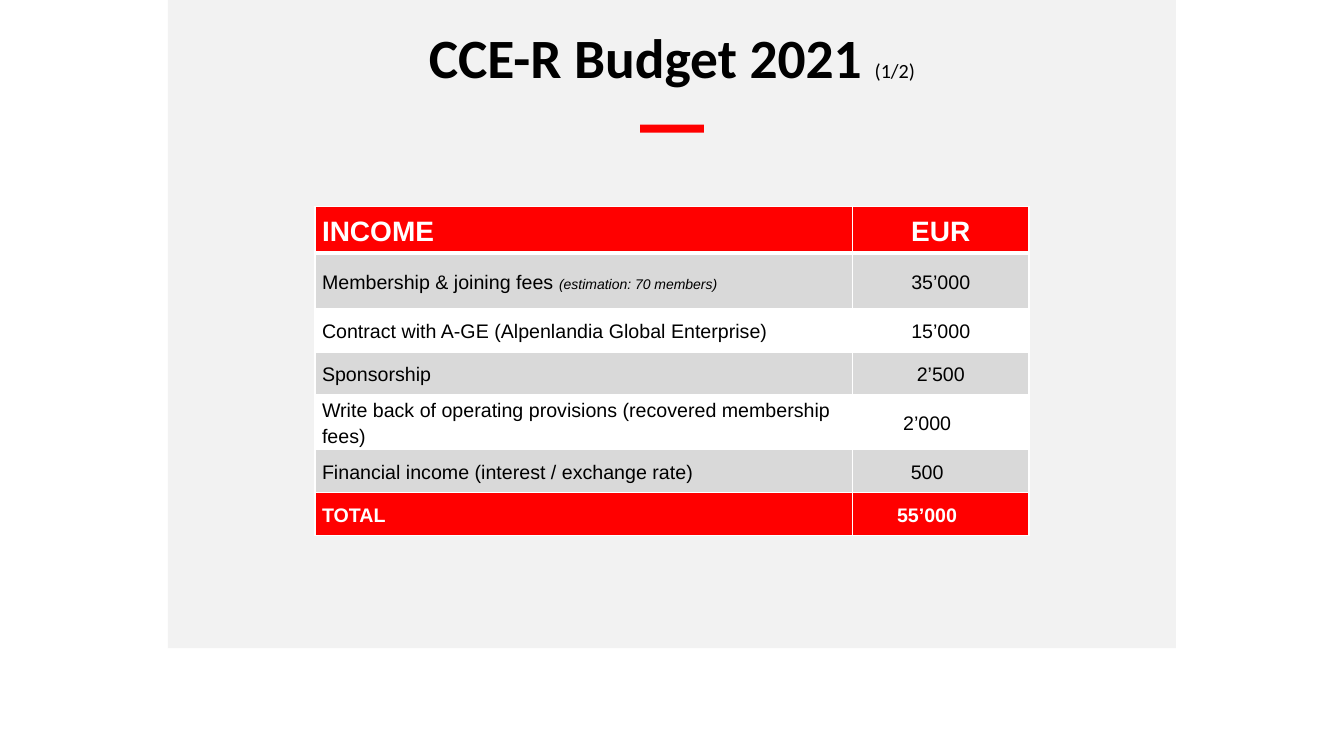
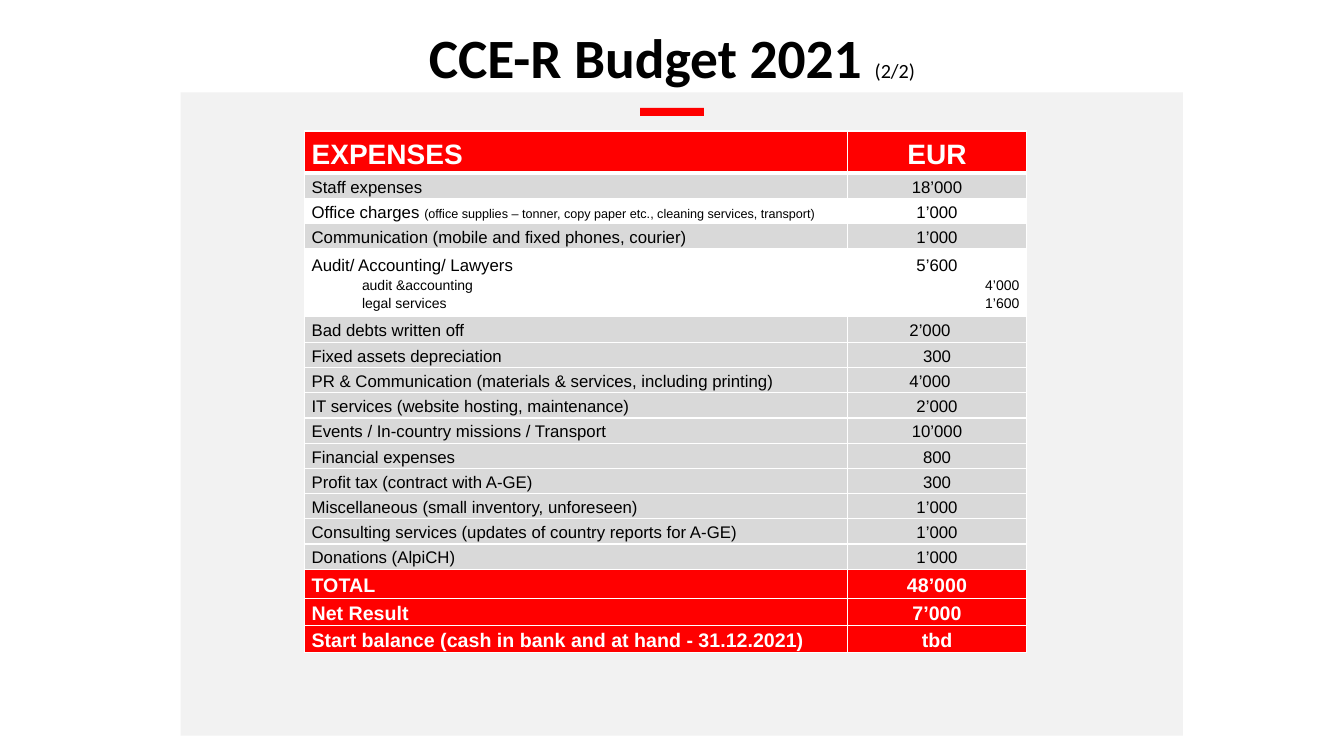
from dataclasses import dataclass

from lxml.etree import SubElement
from pptx import Presentation
from pptx.dml.color import RGBColor
from pptx.enum.shapes import MSO_SHAPE as SHAPE
from pptx.enum.text import MSO_ANCHOR as ANCHOR, PP_ALIGN as ALIGN
from pptx.oxml.ns import qn
from pptx.util import Pt

COLORS = {"red": "FF0000", "panel": "F2F2F2", "grey": "D9D9D9",
          "white": "FFFFFF", "black": "000000"}
SLIDE_W, SLIDE_H = 960, 540
TITLE_BOX = (156, 21.6, 648, 44)
ACCENT_W, ACCENT_H = 45.6, 5.8
CELL_INSET = 5


@dataclass
class Row:
    label: str
    amount: str
    height: float
    fill: str = "grey"
    note: str = ""           # small text after the label
    note_size: float = 10
    note_italic: bool = False
    details: tuple = ()      # indented (label, amount) lines
    shift: float = 0         # extra right inset of the amount
    size: float = 0          # overrides the table's body size


def rgb(name):
    return RGBColor.from_string(COLORS[name])


def add_run(p, text, size, color="black", bold=False, italic=False, font="Arial"):
    r = p.add_run()
    r.text = text
    r.font.name, r.font.size = font, Pt(size)
    r.font.bold, r.font.italic = bold, italic
    r.font.color.rgb = rgb(color)


def add_rect(slide, box, color):
    sp = slide.shapes.add_shape(SHAPE.RECTANGLE, *map(Pt, box))
    sp.shadow.inherit = False
    sp.fill.solid()
    sp.fill.fore_color.rgb = rgb(color)
    sp.line.fill.background()


def add_title(slide, box, page):
    sp = slide.shapes.add_textbox(*map(Pt, box))
    tf = sp.text_frame
    tf.word_wrap = True
    tf.vertical_anchor = ANCHOR.MIDDLE
    p = tf.paragraphs[0]
    p.alignment, p.line_spacing = ALIGN.CENTER, 0.9
    add_run(p, "CCE-R Budget 2021 ", 39.6, bold=True, font="Calibri")
    add_run(p, page, 14.4, font="Calibri")


def add_accent(slide, box, top):
    """Short red bar centred under the title box."""
    left, _, width, _ = box
    add_rect(slide, (left + (width - ACCENT_W) / 2, top, ACCENT_W, ACCENT_H), "red")


def style_cell(cell, fill, top, bottom, shift=0):
    cell.vertical_anchor = ANCHOR.MIDDLE
    cell.margin_top = cell.margin_bottom = 0
    cell.margin_left, cell.margin_right = Pt(CELL_INSET), Pt(CELL_INSET + shift)
    # Borders come before the fill in the cell properties
    tc_pr = cell._tc.get_or_add_tcPr()
    for side, width in (("L", 1), ("R", 1), ("T", top), ("B", bottom)):
        ln = SubElement(tc_pr, qn("a:ln" + side), w=str(Pt(width)))
        SubElement(SubElement(ln, qn("a:solidFill")), qn("a:srgbClr"),
                   val=COLORS["white"])
    cell.fill.solid()
    cell.fill.fore_color.rgb = rgb(fill)


def new_paragraph(tf, align, first=False):
    p = tf.paragraphs[0] if first else tf.add_paragraph()
    p.alignment, p.line_spacing = align, 1.15
    return p


def fill_row(cells, row, size):
    """Write a label and its amount, with any detail lines below them."""
    strong = row.fill == "red"
    color = "white" if strong else "black"
    label_tf, amount_tf = (cell.text_frame for cell in cells)

    p = new_paragraph(label_tf, ALIGN.LEFT, first=True)
    add_run(p, row.label, size, color, strong)
    if row.note:
        add_run(p, row.note, row.note_size, italic=row.note_italic)
    p = new_paragraph(amount_tf, ALIGN.CENTER, first=True)
    add_run(p, row.amount, size, color, strong)

    for label, amount in row.details:
        p = new_paragraph(label_tf, ALIGN.LEFT)
        p._p.get_or_add_pPr().set("marL", str(Pt(36)))
        add_run(p, label, 10)
        add_run(new_paragraph(amount_tf, ALIGN.RIGHT), amount, 10)


def add_budget_table(slide, left, top, widths, rows, body_size):
    height = sum(row.height for row in rows)
    frame = slide.shapes.add_table(len(rows), len(widths), Pt(left), Pt(top),
                                   Pt(sum(widths)), Pt(height))
    table = frame.table
    table.horz_banding = False
    for col, width in zip(table.columns, widths):
        col.width = Pt(width)
    for i, row in enumerate(rows):
        table.rows[i].height = Pt(row.height)
        cells = [table.cell(i, c) for c in range(len(widths))]
        # A thick rule separates the header from the body
        rules = (3 if i == 1 else 1, 3 if i == 0 else 1)
        style_cell(cells[0], row.fill, *rules)
        style_cell(cells[1], row.fill, *rules, shift=row.shift)
        fill_row(cells, row, row.size or body_size)


def budget_slide(prs, page, panel, accent_top, table):
    slide = prs.slides.add_slide(prs.slide_layouts[6])
    add_rect(slide, panel, "panel")
    add_title(slide, TITLE_BOX, page)
    add_accent(slide, TITLE_BOX, accent_top)
    add_budget_table(slide, **table)


INCOME = [
    Row("INCOME", "EUR", 33, "red", size=20),
    Row("Membership & joining fees ", "35’000", 40,
        note="(estimation: 70 members)", note_italic=True),
    Row("Contract with A-GE (Alpenlandia Global Enterprise)", "15’000", 30.8, "white"),
    Row("Sponsorship", "2’500", 30.8),
    Row("Write back of operating provisions (recovered membership fees)",
        "2’000", 30.8, "white", shift=19.5),
    Row("Financial income (interest / exchange rate)", "500", 30.8, shift=19.5),
    Row("TOTAL", "55’000", 30.8, "red", shift=19.5),
]

EXPENSES = [
    Row("EXPENSES", "EUR", 30.2, "red", size=20),
    Row("Staff expenses", "18’000", 18),
    Row("Office charges ", "1’000", 18, "white", note_size=9,
        note="(office supplies – tonner, copy paper etc., cleaning services, transport)"),
    Row("Communication (mobile and fixed phones, courier)", "1’000", 18),
    Row("Audit/ Accounting/ Lawyers", "5’600", 48.2, "white",
        details=(("audit &accounting", "4’000"), ("legal services", "1’600"))),
    Row("Bad debts written off", "2’000", 18.6, shift=10),
    Row("Fixed assets depreciation", "300", 18),
    Row("PR & Communication (materials & services, including printing)",
        "4’000", 18, shift=10),
    Row("IT services (website hosting, maintenance)", "2’000", 18),
    Row("Events / In-country missions / Transport", "10’000", 18),
    Row("Financial expenses", "800", 18),
    Row("Profit tax (contract with A-GE)", "300", 18),
    Row("Miscellaneous (small inventory, unforeseen)", "1’000", 18),
    Row("Consulting services (updates of country reports for A-GE)", "1’000", 18),
    Row("Donations (AlpiCH)", "1’000", 18),
    Row("TOTAL", "48’000", 21, "red", size=14),
    Row("Net Result", "7’000", 18, "red", size=14),
    Row("Start balance (cash in bank and at hand - 31.12.2021)", "tbd", 18, "red",
        size=14),
]


def main():
    prs = Presentation()
    prs.slide_width, prs.slide_height = Pt(SLIDE_W), Pt(SLIDE_H)
    budget_slide(prs, "(1/2)", panel=(120, 0, 720, 463), accent_top=89,
                 table=dict(left=225, top=147.6, widths=(384, 126),
                            rows=INCOME, body_size=14))
    budget_slide(prs, "(2/2)", panel=(129, 66, 716, 459.5), accent_top=77,
                 table=dict(left=217.6, top=93.6, widths=(388, 127.5),
                            rows=EXPENSES, body_size=12))
    prs.save("out.pptx")


if __name__ == "__main__":
    main()
